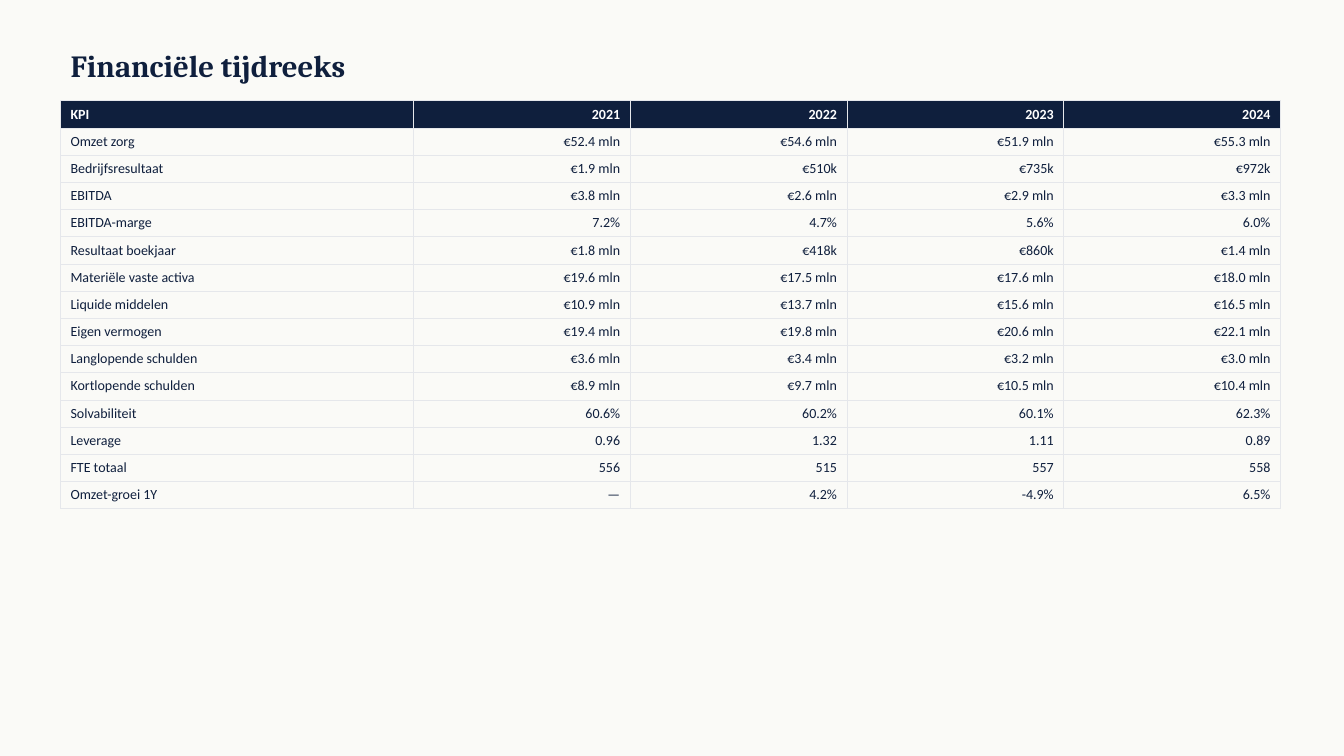
from lxml import etree
from pptx import Presentation
from pptx.dml.color import RGBColor
from pptx.enum.text import MSO_ANCHOR, MSO_AUTO_SIZE, PP_ALIGN
from pptx.oxml.ns import qn
from pptx.util import Inches, Pt

LEFT, RIGHT = PP_ALIGN.LEFT, PP_ALIGN.RIGHT
MIDDLE = MSO_ANCHOR.MIDDLE
NO_FIT = MSO_AUTO_SIZE.NONE

NAVY, WHITE, PAPER, RULE = "0F1F3D", "FFFFFF", "FAFAF7", "E5E7EB"
TITLE = "Financiële tijdreeks"
ROWS = [
    ("KPI", "2021", "2022", "2023", "2024"),
    ("Omzet zorg", "€52.4 mln", "€54.6 mln", "€51.9 mln", "€55.3 mln"),
    ("Bedrijfsresultaat", "€1.9 mln", "€510k", "€735k", "€972k"),
    ("EBITDA", "€3.8 mln", "€2.6 mln", "€2.9 mln", "€3.3 mln"),
    ("EBITDA-marge", "7.2%", "4.7%", "5.6%", "6.0%"),
    ("Resultaat boekjaar", "€1.8 mln", "€418k", "€860k", "€1.4 mln"),
    ("Materiële vaste activa", "€19.6 mln", "€17.5 mln", "€17.6 mln", "€18.0 mln"),
    ("Liquide middelen", "€10.9 mln", "€13.7 mln", "€15.6 mln", "€16.5 mln"),
    ("Eigen vermogen", "€19.4 mln", "€19.8 mln", "€20.6 mln", "€22.1 mln"),
    ("Langlopende schulden", "€3.6 mln", "€3.4 mln", "€3.2 mln", "€3.0 mln"),
    ("Kortlopende schulden", "€8.9 mln", "€9.7 mln", "€10.5 mln", "€10.4 mln"),
    ("Solvabiliteit", "60.6%", "60.2%", "60.1%", "62.3%"),
    ("Leverage", "0.96", "1.32", "1.11", "0.89"),
    ("FTE totaal", "556", "515", "557", "558"),
    ("Omzet-groei 1Y", "—", "4.2%", "-4.9%", "6.5%"),
]
WIDTHS = [3.5] + [2.15] * 4
ROW_H = 0.27


def color(value):
    return RGBColor.from_string(value)


def style(para, name, size, tint, bold, align):
    para.alignment = align
    font = para.font
    font.name, font.size, font.bold = name, Pt(size), bold
    font.color.rgb = color(tint)


def border(cell):
    props = cell._tc.get_or_add_tcPr()
    for i, side in enumerate(("lnL", "lnR", "lnT", "lnB")):
        line = etree.Element(qn(f"a:{side}"), w=str(Pt(0.5)))
        fill = etree.SubElement(line, qn("a:solidFill"))
        etree.SubElement(fill, qn("a:srgbClr"), val=RULE)
        props.insert(i, line)


def add_title(slide):
    title = slide.shapes.title
    title.left, title.top = Inches(0.6), Inches(0.4)
    title.width, title.height = Inches(12), Inches(0.5)
    frame = title.text_frame
    frame.text = TITLE
    frame.auto_size = NO_FIT
    frame.vertical_anchor = MIDDLE
    style(frame.paragraphs[0], "Cambria", 22, NAVY, True, LEFT)


def add_grid(slide):
    table = slide.shapes.add_table(
        len(ROWS), len(WIDTHS), Inches(0.6), Inches(1),
        Inches(sum(WIDTHS)), Inches(ROW_H * len(ROWS))).table
    table.horz_banding = False
    for col, width in zip(table.columns, WIDTHS):
        col.width = Inches(width)
    for r, row in enumerate(ROWS):
        table.rows[r].height = Inches(ROW_H)
        head = r == 0
        for c, text in enumerate(row):
            cell = table.cell(r, c)
            cell.text = text
            if head:
                cell.fill.solid()
                cell.fill.fore_color.rgb = color(NAVY)
            else:
                cell.fill.background()
            border(cell)
            style(cell.text_frame.paragraphs[0], "Calibri", 10,
                  WHITE if head else NAVY, head, RIGHT if c else LEFT)


def main():
    deck = Presentation()
    deck.slide_width, deck.slide_height = Inches(13.33), Inches(7.5)
    slide = deck.slides.add_slide(deck.slide_layouts[5])
    slide.background.fill.solid()
    slide.background.fill.fore_color.rgb = color(PAPER)
    add_title(slide)
    add_grid(slide)
    deck.save("out.pptx")


if __name__ == "__main__":
    main()
